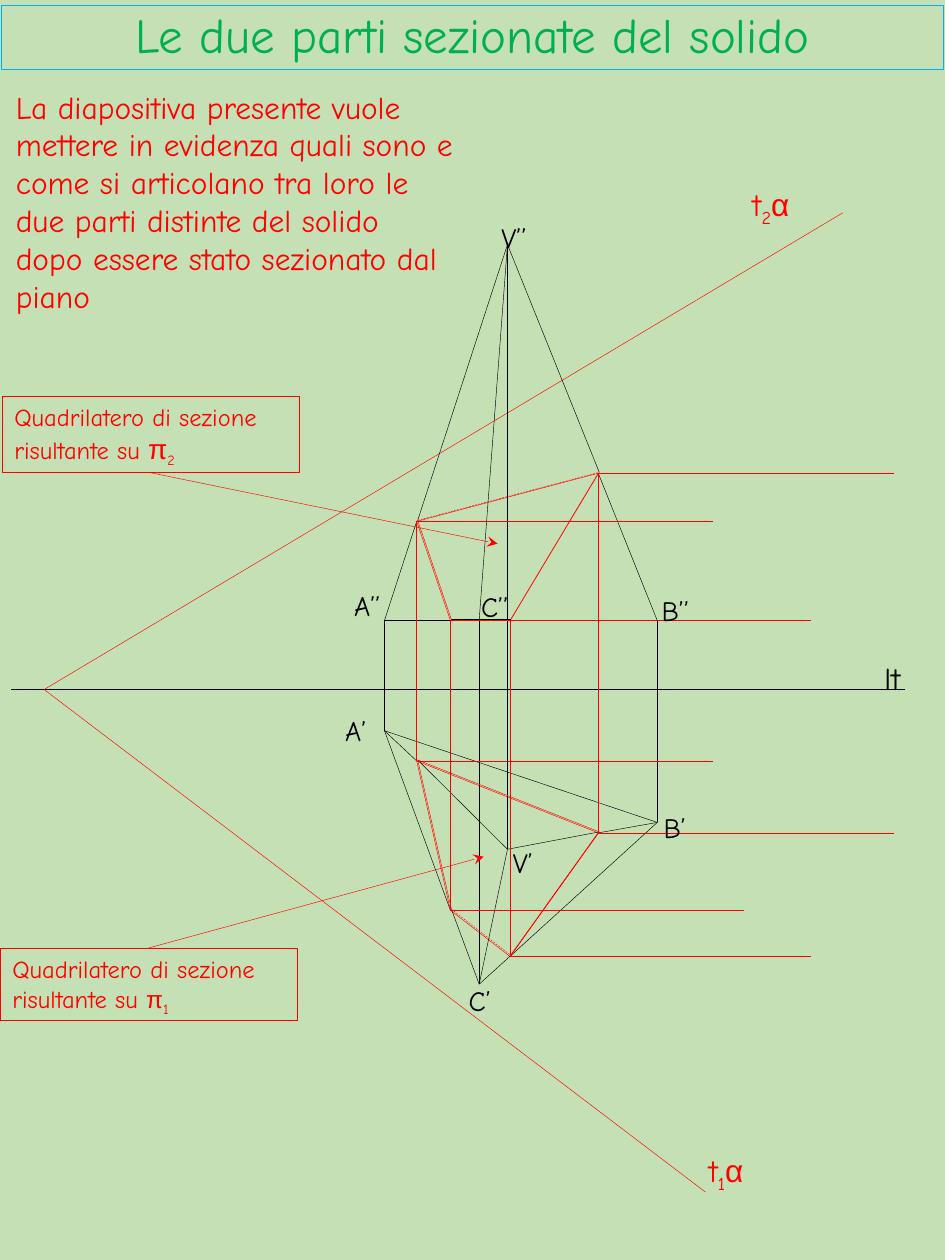
from lxml.etree import SubElement
from pptx import Presentation
from pptx.dml.color import RGBColor
from pptx.enum.dml import MSO_LINE
from pptx.enum.shapes import MSO_CONNECTOR, MSO_SHAPE
from pptx.enum.text import MSO_ANCHOR, PP_ALIGN
from pptx.oxml.ns import qn
from pptx.util import Cm, Pt


class Theme:
    background, black, red = "C5E0B4", "000000", "FF0000"
    title, title_frame = "00B050", "00B0F0"
    font, greek_font = "Comic Neue", "Arial"
    title_size, body_size, label_size, note_size = 28, 18, 16, 14
    hairline, medium, frame = 0.25, 0.5, 0.75


# Content: lengths in cm, runs as (text, format)
TITLE = "Le due parti sezionate del solido"
INTRO = ("La diapositiva presente vuole mettere in evidenza quali sono e come si "
         "articolano tra loro le due parti distinte del solido dopo essere stato "
         "sezionato dal piano")
NOTE = "Quadrilatero di sezione risultante su "
GREEK, SUB = {"font": Theme.greek_font}, {"baseline": -25000}

# Each point: x, height in the front view (2), height in the plan (1)
SOLID = {
    "A": (7.75, 12.51, 14.73), "B": (13.25, 12.51, 16.58),
    "C": (9.64, 12.51, 19.86), "V": (10.21, 4.95, 17.14),
    "P": (8.4, 10.51, 15.34), "Q": (12.06, 9.54, 16.79),
    "R": (10.28, 12.51, 19.28), "S": (9.08, 12.51, 18.35),
}
POINTS = {}
for name, (x, front, plan) in SOLID.items():
    POINTS[name + "2"], POINTS[name + "1"] = (x, front), (x, plan)

LOWER_EDGES = "A1B1 A1S1 R1B1 A1P1 B1Q1 B2B1 A2A1 B2R2 A2P2 B2Q2 S2A2"
UPPER_EDGES = "C2C1 S2R2 V2V1 C2V2 P2V2 V2Q2 V1C1 P1V1 Q1V1 S1C1 C1R1"
SECTION_EDGES = "S1P1 P1Q1 Q1R1 S1R1 S2P2 P2Q2 Q2R2"
SECTION_DROPS = "P2P1 S2S1 Q2Q1 R2R1 S2R2"
HIDDEN_EDGES = ("P2Q2", "S1R1")
UPPER_SHIFT = (0.02, -0.02)  # keeps both outlines of the section visible
RAY_ENDS = {"Q2": 18.03, "P2": 14.38, "R2": 16.35, "P1": 14.38,
            "Q1": 18.03, "S1": 15, "R1": 16.35}

TRACE_START = (0.89, 13.9)
TRACE_ENDS = [(16.99, 4.29), (14.22, 24.03)]
GROUND_LINE = (18.25, 13.9), (0.22, 13.9)

# Labels: text, left, top
LABELS = [("A’", 6.71, 14.25), ("B’", 13.13, 16.22), ("A’’", 6.89, 11.73),
          ("B’’", 13.09, 11.84), ("C’", 9.2, 19.71), ("C’’", 9.45, 11.76),
          ("V’", 10.09, 16.92), ("V’’", 9.86, 4.32)]
TRACE_LABELS = [("2", 14.92, 3.61), ("1", 14.04, 23.08)]
# Notes: plane number, Greek size, box, connection site, arrow tip
NOTES = [("1", Theme.note_size, (0, 19.11, 5.99, 1.45), 0, (9.75, 17.27)),
         ("2", Theme.label_size, (0.04, 7.98, 5.99, 1.55), 2, (10.03, 10.96))]


def color(value):
    return RGBColor.from_string(value)


def add_text(shapes, runs, box, size=Theme.label_size, ink=Theme.black, frame=None,
             frame_width=Theme.hairline, align=None, anchor=MSO_ANCHOR.TOP, spacing=None):
    """Add text, in a framed rectangle when a frame colour is given."""
    place = [Cm(length) for length in box]
    if frame:
        shape = shapes.add_shape(MSO_SHAPE.RECTANGLE, *place)
        shape.shadow.inherit = False
        shape.fill.background()
        shape.line.color.rgb = color(frame)
        shape.line.width = Pt(frame_width)
    else:
        shape = shapes.add_textbox(*place)
    text_frame = shape.text_frame
    text_frame.word_wrap = True
    text_frame.vertical_anchor = anchor
    para = text_frame.paragraphs[0]
    para.alignment = align or PP_ALIGN.LEFT
    para.line_spacing = spacing
    for text, style in runs:
        span = para.add_run()
        span.text = text
        span.font.name = style.get("font", Theme.font)
        span.font.size = Pt(style.get("size", size))
        span.font.color.rgb = color(ink)
        if "baseline" in style:
            span.font._element.set("baseline", str(style["baseline"]))
    return shape


def add_line(shapes, start, end, ink=Theme.black, width=Theme.hairline,
             dashed=False, arrow=False):
    ends = [Cm(length) for length in (*start, *end)]
    line = shapes.add_connector(MSO_CONNECTOR.STRAIGHT, *ends)
    line.line.color.rgb = color(ink)
    line.line.width = Pt(width)
    if dashed:
        line.line.dash_style = MSO_LINE.DASH
    if arrow:
        SubElement(line.line._get_or_add_ln(), qn("a:tailEnd"), type="stealth")
    SubElement(line._element.spPr, qn("a:effectLst"))
    return line


def add_edges(shapes, edges, ink=Theme.black, dashed=(), thick=(), shift=(0, 0)):
    for edge in edges.split():
        start, end = [[length + step for length, step in zip(POINTS[name], shift)]
                      for name in (edge[:2], edge[2:])]
        add_line(shapes, start, end, ink,
                 Theme.medium if edge in thick else Theme.hairline, edge in dashed)


def main():
    deck = Presentation()
    deck.slide_width, deck.slide_height = Cm(19.05), Cm(25.4)
    page = deck.slides.add_slide(deck.slide_layouts[6])
    page.background.fill.solid()
    page.background.fill.fore_color.rgb = color(Theme.background)
    shapes = page.shapes

    # Title and introduction
    add_text(shapes, [(TITLE, {})], (0.03, 0.11, 18.99, 1.29), Theme.title_size, Theme.title,
             Theme.title_frame, Theme.frame, PP_ALIGN.CENTER, MSO_ANCHOR.MIDDLE, 0.9)
    add_text(shapes, [(INTRO, {})], (0.07, 1.64, 9.37, 4.88), Theme.body_size, Theme.red)

    # Ground line and traces of the cutting plane
    add_line(shapes, *GROUND_LINE)
    add_text(shapes, [("lt", {})], (17.58, 13.16, 1.17, 1.02), Theme.body_size)
    for end in TRACE_ENDS:
        add_line(shapes, TRACE_START, end, Theme.red)
    for number, left, top in TRACE_LABELS:
        add_text(shapes, [("t", {}), (number, SUB), ("α", GREEK)],
                 (left, top, 1.57, 1.02), Theme.body_size, Theme.red)

    # Lower part of the solid, with the section
    add_edges(shapes, LOWER_EDGES)
    add_edges(shapes, SECTION_EDGES, Theme.red, thick=("Q1R1",))

    # Upper part of the solid, with the same section
    upper = shapes.add_group_shape().shapes
    add_edges(upper, UPPER_EDGES, shift=UPPER_SHIFT)
    add_edges(upper, SECTION_EDGES, Theme.red, dashed=HIDDEN_EDGES, shift=UPPER_SHIFT)

    # Projection lines of the section points
    add_edges(shapes, SECTION_DROPS, Theme.red)
    for name, right in RAY_ENDS.items():
        x, y = POINTS[name]
        add_line(shapes, (x, y), (right, y), Theme.red)

    # Point labels
    for text, left, top in LABELS:
        width = 0.99 if text == "V’" else 1.19
        add_text(shapes, [(text, {})], (left, top, width, 0.94))

    # Notes with arrows to the section
    for number, greek_size, box, site, tip in NOTES:
        runs = [(NOTE, {}), ("π", {**GREEK, "size": greek_size}), (number, SUB)]
        note = add_text(shapes, runs, box, Theme.note_size, Theme.red, Theme.red)
        add_line(shapes, box[:2], tip, Theme.red, arrow=True).begin_connect(note, site)

    deck.save("out.pptx")


if __name__ == "__main__":
    main()
